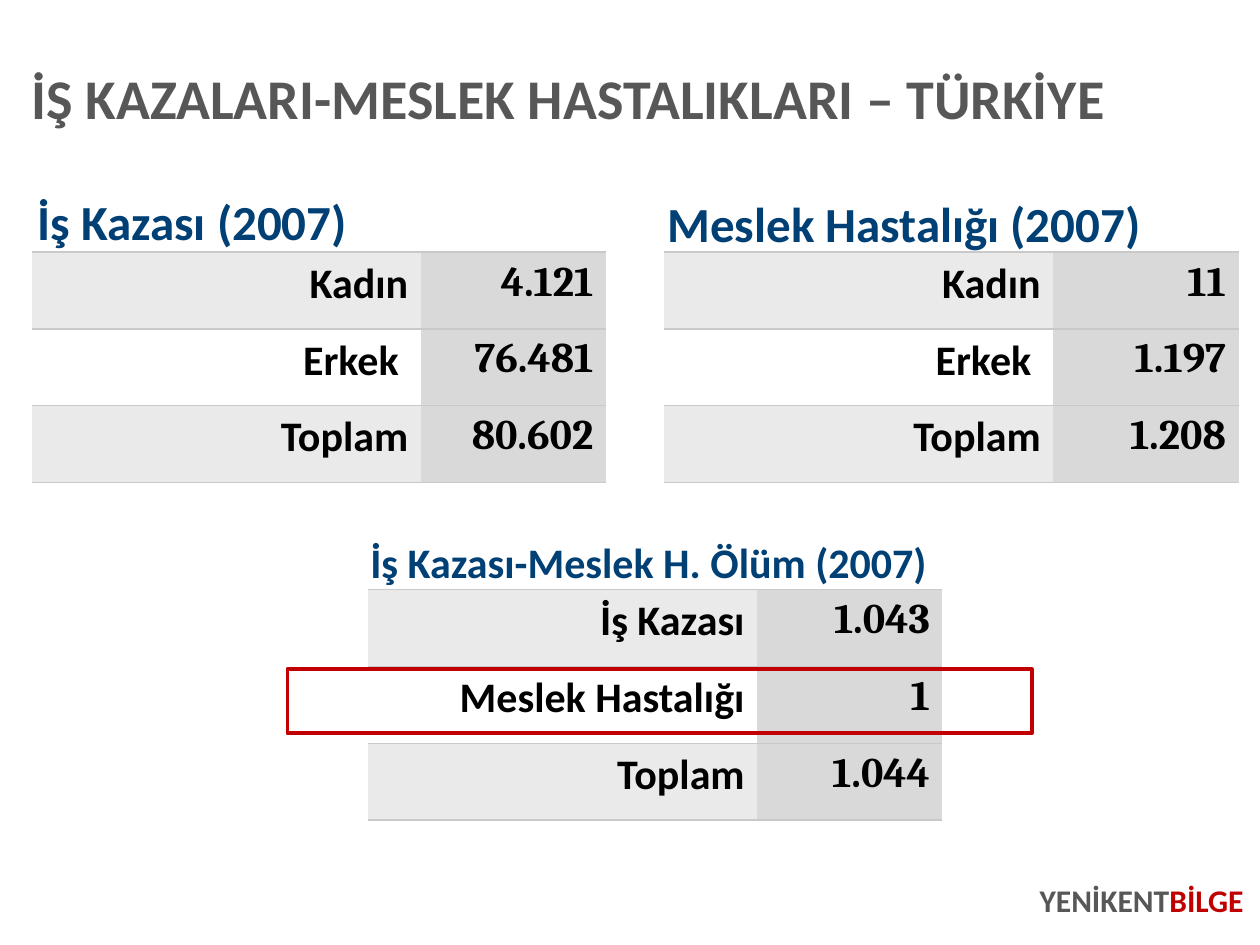
from dataclasses import dataclass
from lxml.etree import SubElement
from pptx import Presentation
from pptx.dml.color import RGBColor
from pptx.enum.shapes import MSO_SHAPE
from pptx.enum.text import MSO_ANCHOR, MSO_AUTO_SIZE, PP_ALIGN
from pptx.oxml import parse_xml
from pptx.oxml.ns import nsdecls, qn
from pptx.util import Inches, Pt


@dataclass(frozen=True)
class Theme:
    sans: str = "Calibri"
    serif: str = "Cambria"
    black: str = "000000"
    gray: str = "575757"
    blue: str = "004074"
    red: str = "C00000"
    rule: str = "C9C9C9"
    band: str = "EAEAEA"
    plain: str = "FFFFFF"
    value: str = "D9D9D9"
    title: int = 32
    head: int = 28
    body: int = 24
    foot: int = 18


THEME = Theme()
COLS, ROWS = 100, 75
WIDE, HIGH = Inches(10), Inches(7.5)
LABEL, VALUE, ROW = 30.9, 14.7, 6.1


def across(cols):
    return round(WIDE * cols / COLS)


def down(rows):
    return round(HIGH * rows / ROWS)


def area(x, y, w, h):
    return across(x), down(y), across(w), down(h)


def add_run(para, text, size, color, face=THEME.sans):
    run = para.add_run()
    run.text = text
    font = run.font
    font.name, font.size, font.bold = face, Pt(size), True
    font.color.rgb = RGBColor.from_string(color)


def add_title(slide, text):
    title = slide.shapes.title
    title.left, title.top, title.width, title.height = area(2.5, 4.5, 96.4, 7.1)
    frame = title.text_frame
    frame.auto_size = MSO_AUTO_SIZE.NONE
    frame.vertical_anchor = MSO_ANCHOR.MIDDLE
    frame.margin_left = frame.margin_right = 0
    para = frame.paragraphs[0]
    para.alignment = PP_ALIGN.LEFT
    para.line_spacing = 0.9
    add_run(para, text, THEME.title, THEME.gray)


def add_head(slide, box, text, size):
    frame = slide.shapes.add_textbox(*area(*box)).text_frame
    frame.word_wrap = True
    frame.auto_size = MSO_AUTO_SIZE.SHAPE_TO_FIT_TEXT
    add_run(frame.paragraphs[0], text, size, THEME.blue)


def add_rules(cell):
    props = cell._tc.get_or_add_tcPr()
    for spot, side in enumerate("LRTB"):
        line = parse_xml(f'<a:ln{side} {nsdecls("a")} w="{Pt(1)}"/>')
        if side in "TB":
            fill = SubElement(line, qn("a:solidFill"))
            SubElement(fill, qn("a:srgbClr"), val=THEME.rule)
        else:
            SubElement(line, qn("a:noFill"))
        props.insert(spot, line)


def fill_cell(cell, text, face, color):
    cell.fill.solid()
    cell.fill.fore_color.rgb = RGBColor.from_string(color)
    add_rules(cell)
    para = cell.text_frame.paragraphs[0]
    para.alignment = PP_ALIGN.RIGHT
    add_run(para, text, THEME.body, THEME.black, face)


def add_grid(slide, x, y, data):
    box = area(x, y, LABEL + VALUE, ROW * len(data))
    table = slide.shapes.add_table(len(data), 2, *box).table
    table.first_row = table.horz_banding = False
    for col, width in zip(table.columns, (LABEL, VALUE)):
        col.width = across(width)
    for i, (label, value) in enumerate(data):
        table.rows[i].height = down(ROW)
        band = THEME.plain if i % 2 else THEME.band
        fill_cell(table.cell(i, 0), label, THEME.sans, band)
        fill_cell(table.cell(i, 1), value, THEME.serif, THEME.value)


def add_foot(slide, parts):
    frame = slide.shapes.add_textbox(*area(75.6, 69.9, 23.1, 5.6)).text_frame
    frame.word_wrap = True
    frame.margin_left = frame.margin_right = 0
    frame.margin_top = frame.margin_bottom = 0
    para = frame.paragraphs[0]
    para.alignment = PP_ALIGN.RIGHT
    for text, color in parts:
        add_run(para, text, THEME.foot, color)


def add_frame(slide, box):
    shape = slide.shapes.add_shape(MSO_SHAPE.RECTANGLE, *area(*box))
    shape.shadow.inherit = False
    shape.fill.background()
    shape.line.color.rgb = RGBColor.from_string(THEME.red)
    shape.line.width = Pt(2)


def main():
    deck = Presentation()
    deck.slide_width, deck.slide_height = WIDE, HIGH
    slide = deck.slides.add_slide(deck.slide_layouts[5])

    add_title(slide, "İŞ KAZALARI-MESLEK HASTALIKLARI – TÜRKİYE")
    add_grid(slide, 2.5, 20, [
        ("Kadın", "4.121"), ("Erkek ", "76.481"), ("Toplam", "80.602")])
    add_head(slide, (2, 14.7, 46.2, 5.7), "İş Kazası (2007)", THEME.head)
    add_grid(slide, 52.7, 20, [
        ("Kadın", "11"), ("Erkek ", "1.197"), ("Toplam", "1.208")])
    add_head(slide, (52, 14.9, 43, 5.7), "Meslek Hastalığı (2007)", THEME.head)
    add_grid(slide, 29.2, 46.8, [
        ("İş Kazası", "1.043"), ("Meslek Hastalığı", "1"), ("Toplam", "1.044")])
    add_head(slide, (28.4, 42.1, 47.8, 5),
             "İş Kazası-Meslek H. Ölüm (2007)", THEME.body)
    add_frame(slide, (22.8, 53.1, 59.1, 5.1))
    add_foot(slide, [("YENİKENT", THEME.gray), ("BİLGE", THEME.red)])

    deck.save("out.pptx")


if __name__ == "__main__":
    main()
